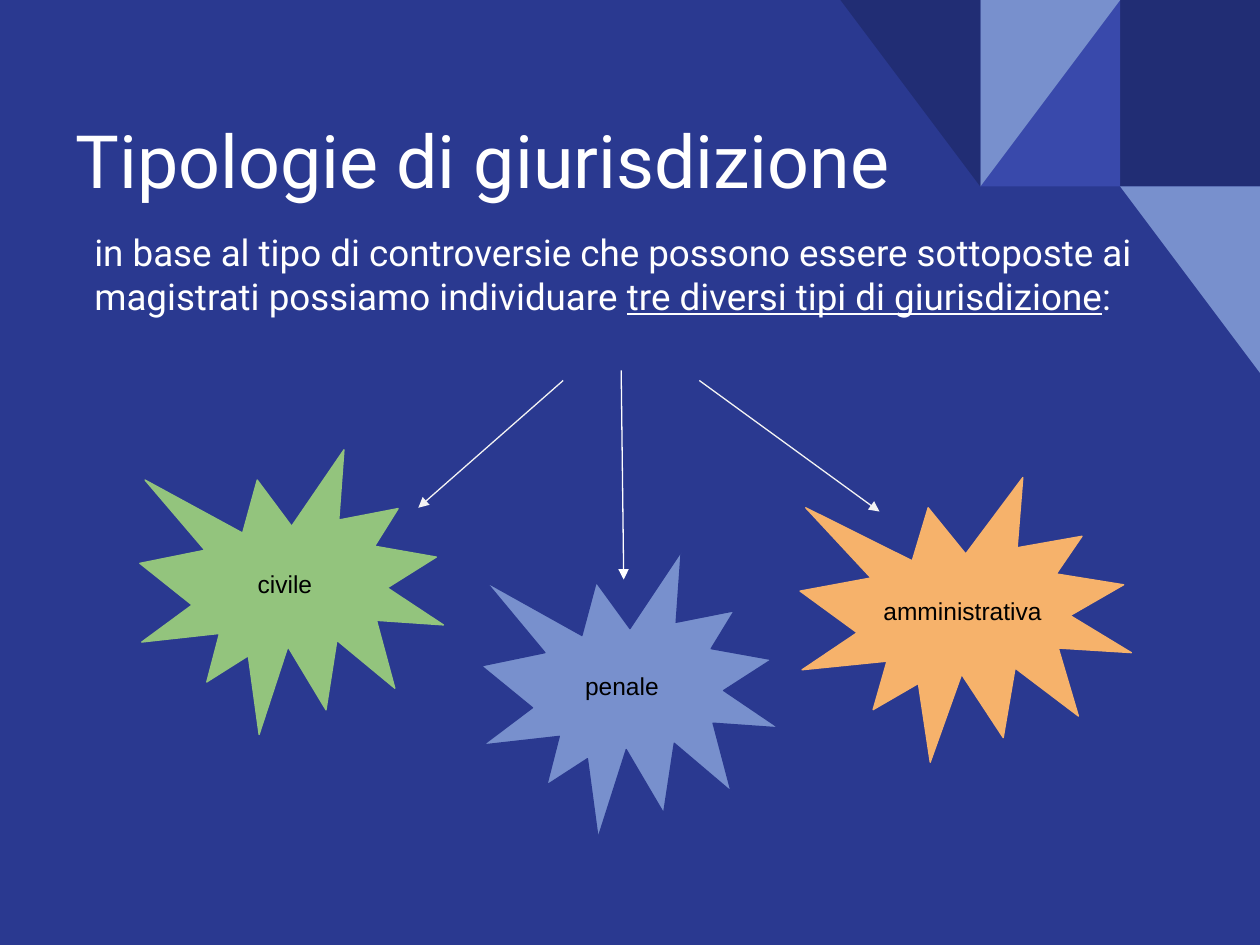
from dataclasses import dataclass

from lxml import etree
from pptx import Presentation
from pptx.dml.color import RGBColor
from pptx.enum.shapes import MSO_CONNECTOR, MSO_SHAPE
from pptx.enum.text import MSO_ANCHOR, MSO_AUTO_SIZE, PP_ALIGN
from pptx.oxml.ns import qn
from pptx.util import Inches, Pt

RECTANGLE = MSO_SHAPE.RECTANGLE
TRIANGLE = MSO_SHAPE.RIGHT_TRIANGLE
BURST = MSO_SHAPE.EXPLOSION1
STRAIGHT = MSO_CONNECTOR.STRAIGHT
TOP, MIDDLE, BOTTOM = MSO_ANCHOR.TOP, MSO_ANCHOR.MIDDLE, MSO_ANCHOR.BOTTOM
LEFT = PP_ALIGN.LEFT
NO_FIT = MSO_AUTO_SIZE.NONE
TITLE_ONLY = 5


@dataclass(frozen=True)
class Theme:
    background: str = "2A3990"
    navy: str = "212D74"
    indigo: str = "3949AB"
    sky: str = "7890CD"
    green: str = "93C47D"
    orange: str = "F6B26B"
    white: str = "FFFFFF"
    pale: str = "F3F3F3"
    black: str = "000000"
    font: str = "Roboto"
    label_font: str = "Arial"
    title_size: int = 42
    body_size: int = 21
    label_size: int = 14


THEME = Theme()


def color(value):
    return RGBColor.from_string(value)


def write_text(shape, *parts, font=THEME.font, size=THEME.body_size,
               ink=THEME.white, anchor=TOP, indent=0):
    """Write one left-aligned paragraph from (text, underlined) parts."""
    frame = shape.text_frame
    frame.word_wrap = True
    frame.auto_size = NO_FIT
    frame.vertical_anchor = anchor
    frame.margin_left = frame.margin_right = Inches(0.1)
    frame.margin_top = frame.margin_bottom = Inches(0.1)
    para = frame.paragraphs[0]
    para.alignment = LEFT
    if indent:
        properties = para._p.get_or_add_pPr()
        properties.set("marL", str(Inches(indent)))
        properties.set("indent", "0")
    for text, underlined in parts:
        span = para.add_run()
        span.text = text
        span.font.name = font
        span.font.size = Pt(size)
        span.font.color.rgb = color(ink)
        span.font.underline = underlined


def add_filled(page, kind, box, fill, line=None):
    shape = page.shapes.add_shape(kind, *map(Inches, box))
    shape.shadow.inherit = False
    shape.fill.solid()
    shape.fill.fore_color.rgb = color(fill)
    if line:
        shape.line.color.rgb = color(line)
        shape.line.width = Pt(0.75)
    else:
        shape.line.fill.background()
    return shape


def add_corner(page, box):
    """Mosaic of three columns and two rows; cells are numbered from its corner."""
    left, top, width, height = box
    cell_width, cell_height = width / 3, height / 2
    tiles = [  # column, row, kind, fill, rotation, mirrored
        (2, 0, RECTANGLE, THEME.navy, 0, False),
        (1, 0, TRIANGLE, THEME.indigo, 0, True),
        (1, 0, TRIANGLE, THEME.sky, 180, True),
        (0, 0, TRIANGLE, THEME.navy, 180, False),
        (2, 1, TRIANGLE, THEME.sky, 180, False),
    ]
    for column, row, kind, fill, rotation, mirrored in tiles:
        cell = (left + column * cell_width, top + row * cell_height,
                cell_width, cell_height)
        tile = add_filled(page, kind, cell, fill)
        tile.rotation = rotation
        if mirrored:
            tile._element.spPr.get_or_add_xfrm().set("flipH", "1")


def add_title(page, box):
    title = page.shapes.title
    title.left, title.top, title.width, title.height = map(Inches, box)
    write_text(title, ("Tipologie di giurisdizione", False),
               size=THEME.title_size, anchor=BOTTOM)


def add_intro(page, box):
    intro = page.shapes.add_textbox(*map(Inches, box))
    write_text(
        intro,
        ("in base al tipo di controversie che possono essere sottoposte ai "
         "magistrati possiamo individuare ", False),
        ("tre diversi tipi di giurisdizione", True),
        (":", False))


def add_burst(page, box, label, fill, line, indent):
    burst = add_filled(page, BURST, box, fill, line)
    write_text(burst, (label, False), font=THEME.label_font,
               size=THEME.label_size, ink=THEME.black, anchor=MIDDLE,
               indent=indent)


def add_arrow(page, start, end, ink):
    arrow = page.shapes.add_connector(STRAIGHT, *map(Inches, start + end))
    arrow.line.color.rgb = color(ink)
    arrow.line.width = Pt(0.75)
    head = etree.SubElement(arrow.line._get_or_add_ln(), qn("a:tailEnd"))
    head.set("type", "triangle")
    head.set("w", "med")
    head.set("len", "med")
    etree.SubElement(arrow._element.spPr, qn("a:effectLst"))


def add_diagram(page, box):
    """Three bursts and the arrows to them, measured from the box corner."""
    left, top = box[:2]
    bursts = [  # x, y, width, height, label, fill, line, indent
        (2.71, 1.44, 2.36, 2.27, "penale", THEME.sky, THEME.background, 0.22),
        (5.24, 0.85, 2.63, 2.26, "amministrativa", THEME.orange, THEME.orange, 0),
        (0, 0.63, 2.41, 2.26, "civile", THEME.green, THEME.green, 0.32),
    ]
    for x, y, width, height, *content in bursts:
        add_burst(page, (left + x, top + y, width, height), *content)

    arrows = [  # start, end, ink
        ((3.82, 0), (3.84, 1.66), THEME.white),
        ((4.44, 0.08), (5.87, 1.12), THEME.pale),
        ((3.36, 0.08), (2.21, 1.09), THEME.pale),
    ]
    for start, end, ink in arrows:
        add_arrow(page, (left + start[0], top + start[1]),
                  (left + end[0], top + end[1]), ink)


def main():
    deck = Presentation()
    deck.slide_width, deck.slide_height = Inches(10), Inches(7.5)
    page = deck.slides.add_slide(deck.slide_layouts[TITLE_ONLY])
    page.background.fill.solid()
    page.background.fill.fore_color.rgb = color(THEME.background)

    add_corner(page, (6.67, 0, 3.33, 2.96))
    add_title(page, (0.5, 0.49, 8.99, 1.22))
    add_intro(page, (0.65, 1.72, 8.99, 4.92))
    add_diagram(page, (1.11, 2.94, 7.87, 3.71))
    deck.save("out.pptx")


if __name__ == "__main__":
    main()
